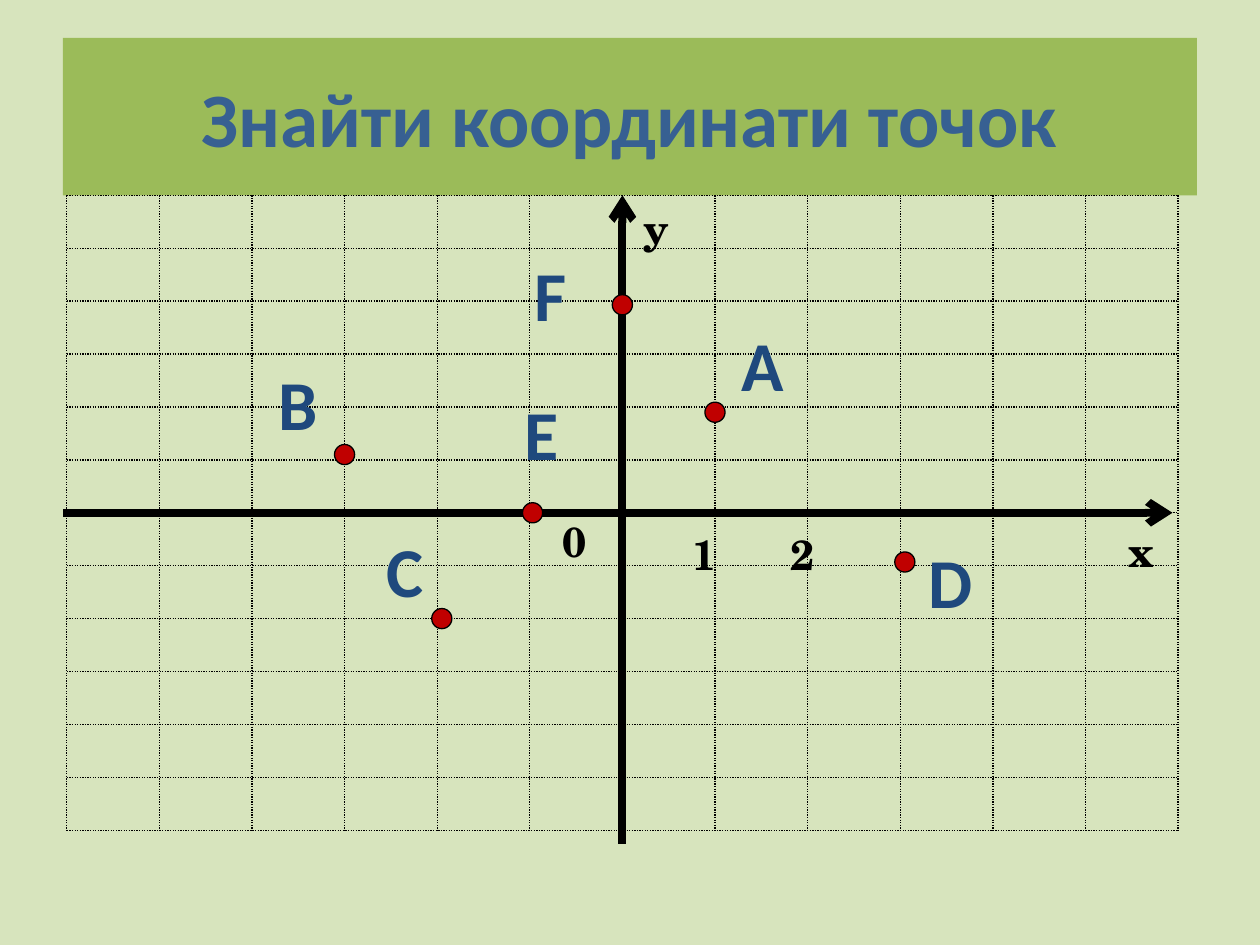
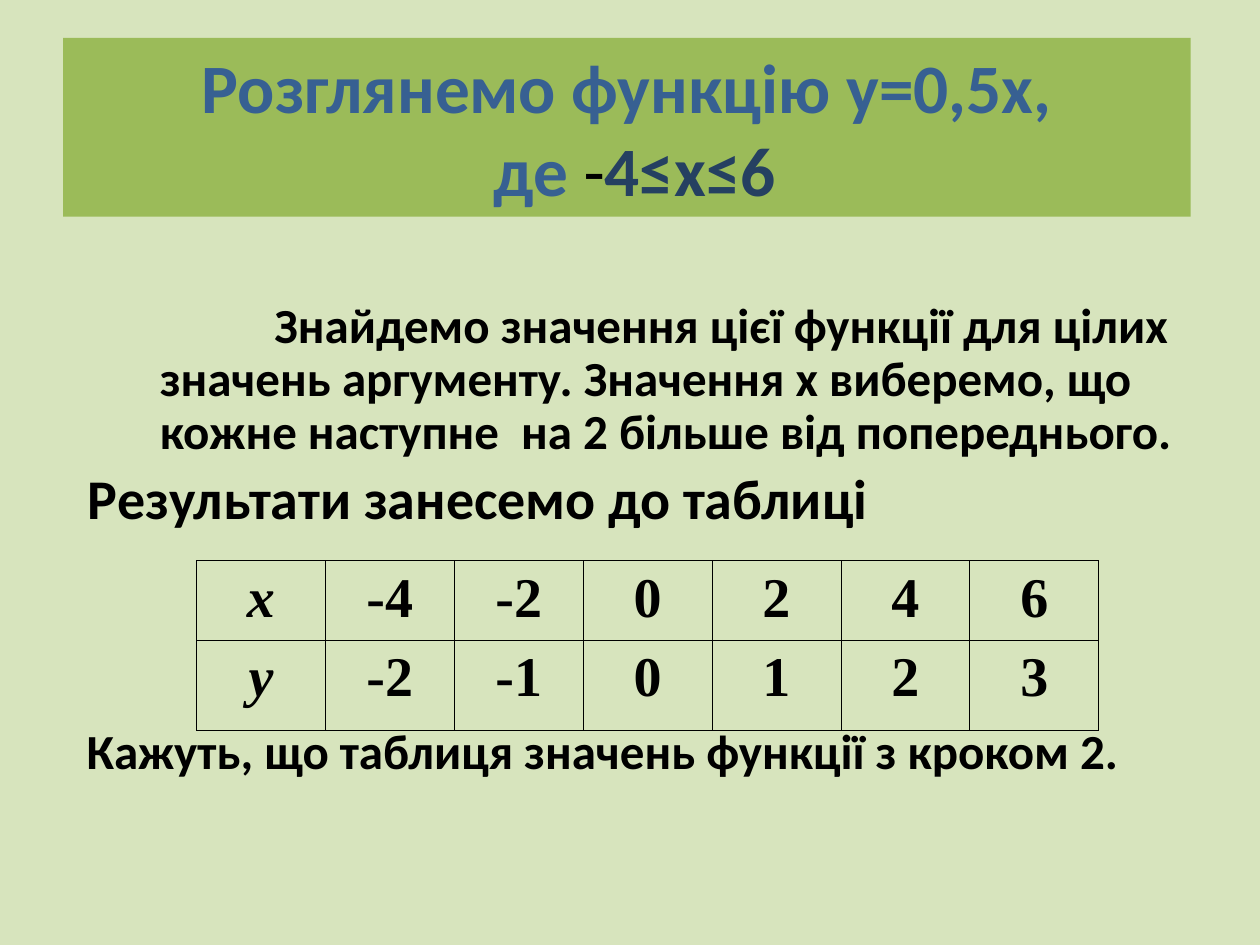
from pptx import Presentation
from pptx.dml.color import RGBColor
from pptx.enum.dml import MSO_LINE
from pptx.enum.shapes import MSO_CONNECTOR, MSO_SHAPE
from pptx.enum.text import MSO_ANCHOR, PP_ALIGN
from pptx.oxml.ns import qn
from pptx.util import Inches, Pt
from lxml.etree import SubElement

color = RGBColor.from_string
PAPER, BAND, BLACK, RED = "D7E4BD", "9BBB59", "000000", "C00000"
TITLE_BLUE, DARK_BLUE, LABEL_BLUE = "376092", "254061", "1F497D"
SANS, SCHOOL, TIMES = "Calibri", "TeX Gyre Schola", "Times New Roman"

# Coordinate plane: origin and size of one unit, in inches
ORIGIN_X, ORIGIN_Y, UNIT_X, UNIT_Y, REACH = 4.94, 4.07, 0.735, 0.42, 6


def at(col, row):
    """Slide position of a point of the coordinate plane."""
    return Inches(ORIGIN_X + col * UNIT_X), Inches(ORIGIN_Y - row * UNIT_Y)


def write(p, text, size, hex_color=BLACK, font=SANS, bold=True):
    r = p.add_run()
    r.text = text
    r.font.size, r.font.name, r.font.bold = Pt(size), font, bold
    r.font.color.rgb = color(hex_color)
    return r


prs = Presentation()
prs.slide_width, prs.slide_height = Inches(10), Inches(7.5)

# Background and title band of both slides
titles = [
    (9, 1.25, 44, [[("Знайти координати точок", TITLE_BLUE, True)]]),
    (8.95, 1.42, 39.6, [[("Розглянемо функцію у=0,5х,", TITLE_BLUE, True)],
                        [(" де ", TITLE_BLUE, True), ("-", BLACK, False),
                         ("4≤x≤6", DARK_BLUE, True)]]),
]
for width, height, size, lines in titles:
    s = prs.slides.add_slide(prs.slide_layouts[6])
    s.background.fill.solid()
    s.background.fill.fore_color.rgb = color(PAPER)
    band = s.shapes.add_shape(MSO_SHAPE.RECTANGLE, Inches(0.5), Inches(0.3),
                              Inches(width), Inches(height))
    band.shadow.inherit = False
    band.fill.solid()
    band.fill.fore_color.rgb = color(BAND)
    band.line.fill.background()
    tf = band.text_frame
    tf.vertical_anchor = MSO_ANCHOR.MIDDLE
    for i, line in enumerate(lines):
        p = tf.add_paragraph() if i else tf.paragraphs[0]
        p.alignment = PP_ALIGN.CENTER
        for text, hex_color, bold in line:
            write(p, text, size, hex_color, bold=bold)

plane, table_slide = prs.slides

# Slide 1: grid lines, then the two axes
steps = range(-REACH, REACH + 1)
grid = [((k, REACH), (k, -REACH), False) for k in steps]
grid += [((-REACH, k), (REACH, k), False) for k in steps]
axes = [((0, -6.25), (0, REACH), True), ((-6.04, 0), (5.94, 0), True)]
for start, end, is_axis in grid + axes:
    line = plane.shapes.add_connector(MSO_CONNECTOR.STRAIGHT, *at(*start), *at(*end))
    line.line.color.rgb = color(BLACK)
    line.line.width = Pt(4.5 if is_axis else 0.75)
    if is_axis:
        SubElement(line.line._get_or_add_ln(), qn("a:tailEnd"), type="arrow")
    else:
        line.line.dash_style = MSO_LINE.ROUND_DOT
    SubElement(line._element.spPr, qn("a:effectLst"))

points = [(1, 1.9), (-3, 1.1), (-1.95, -2), (3.05, -0.93), (0, 3.93), (-0.97, 0)]
dot = Inches(0.16)
for point in points:
    x, y = at(*point)
    sp = plane.shapes.add_shape(MSO_SHAPE.FLOWCHART_CONNECTOR,
                                x - dot // 2, y - dot // 2, dot, dot)
    sp.shadow.inherit = False
    sp.fill.solid()
    sp.fill.fore_color.rgb = color(RED)
    sp.line.color.rgb = color(BLACK)
    sp.line.width = Pt(0.75)

# Top left corner of each label, in units of the plane
axis_labels = [("0", -0.78, 0.07), ("1", 0.62, -0.17), ("у", 0.09, 5.98),
               ("х", 5.33, -0.12), ("2", 1.68, -0.17)]
point_labels = [("A", 1.15, 3.74), ("B", -3.85, 3), ("C", -2.68, -0.17),
                ("D", 3.17, -0.36), ("E", -1.19, 2.43), ("F", -1.08, 5.05)]
for labels, size, hex_color, font, height in [(axis_labels, 24, BLACK, SCHOOL, 0.48),
                                              (point_labels, 40, LABEL_BLUE, SANS, 0.77)]:
    for text, col, row in labels:
        box = plane.shapes.add_textbox(*at(col, row), Inches(0.63), Inches(height))
        box.text_frame.word_wrap = True
        write(box.text_frame.paragraphs[0], text, size, hex_color, font)

# Slide 2: text around the table (size, left margin, first-line indent, space before)
body = [
    ("Знайдемо значення цієї функції для цілих значень аргументу. Значення х "
     "виберемо, що кожне наступне  на 2 більше від попереднього.", 28, 0.67, 0.91, 0),
    ("Результати занесемо до таблиці", 32, 0.1, 0, 6.4),
    ("Кажуть, що таблиця значень функції з кроком 2.", 28, 0.09, 0, 112),
]
box = table_slide.shapes.add_textbox(Inches(0.5), Inches(2.34), Inches(9), Inches(4.64))
tf = box.text_frame
tf.word_wrap = True
for i, (text, size, margin, indent, before) in enumerate(body):
    p = tf.add_paragraph() if i else tf.paragraphs[0]
    p.line_spacing, p.space_before = 0.9, Pt(before)
    pPr = p._p.get_or_add_pPr()
    pPr.set("marL", str(Inches(margin)))
    pPr.set("indent", str(Inches(indent)))
    write(p, text, size)

arguments = range(-4, 7, 2)
rows = [["х", *arguments], ["у", *(x // 2 for x in arguments)]]
table = table_slide.shapes.add_table(2, len(rows[0]), Inches(1.56), Inches(4.45),
                                     Inches(7.16), Inches(1.34)).table
table.first_row = table.horz_banding = False
for row, height in zip(table.rows, (0.63, 0.71)):
    row.height = Inches(height)
for i, values in enumerate(rows):
    for j, value in enumerate(values):
        cell = table.cell(i, j)
        p = cell.text_frame.paragraphs[0]
        p.alignment = PP_ALIGN.CENTER
        write(p, str(value), 32, font=TIMES).font.italic = j == 0
        tcPr = cell._tc.get_or_add_tcPr()
        for side in ("a:lnL", "a:lnR", "a:lnT", "a:lnB"):
            border = SubElement(tcPr, qn(side), w=str(Pt(0.5)))
            SubElement(SubElement(border, qn("a:solidFill")), qn("a:srgbClr"), val=BLACK)
        cell.fill.background()

prs.save("out.pptx")
